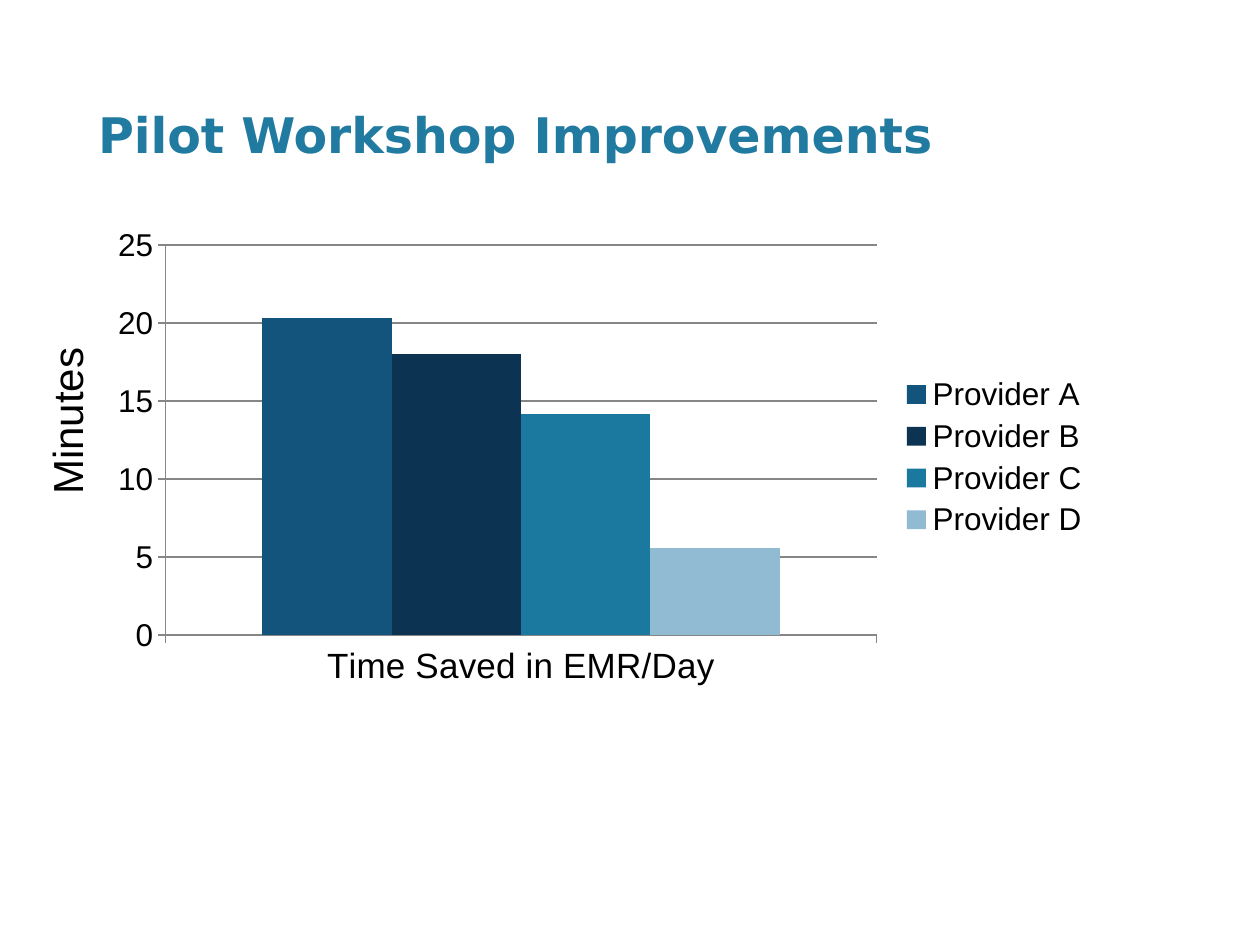
from dataclasses import dataclass

from pptx import Presentation
from pptx.chart.data import CategoryChartData
from pptx.dml.color import RGBColor
from pptx.enum.chart import XL_CHART_TYPE as ChartType
from pptx.enum.chart import XL_LEGEND_POSITION as LegendPosition
from pptx.enum.chart import XL_TICK_MARK as TickMark
from pptx.enum.text import MSO_ANCHOR as Anchor
from pptx.enum.text import MSO_AUTO_SIZE as AutoSize
from pptx.enum.text import PP_ALIGN as Align
from pptx.util import Pt

BLACK = RGBColor(0x00, 0x00, 0x00)
GREY = RGBColor(0x86, 0x86, 0x86)
TITLE_BLUE = RGBColor(0x21, 0x7A, 0xA0)

TITLE_FONT = {"name": "DejaVu Sans", "size": Pt(28), "bold": True}
CHART_FONT = {"name": "Arial", "size": Pt(18), "bold": False}
CATEGORY_FONT = {**CHART_FONT, "size": Pt(20)}
AXIS_TITLE_FONT = {**CHART_FONT, "size": Pt(24)}


@dataclass(frozen=True)
class Area:
    left: float
    top: float
    width: float
    height: float

    def lengths(self) -> tuple:
        return Pt(self.left), Pt(self.top), Pt(self.width), Pt(self.height)


@dataclass(frozen=True)
class Provider:
    name: str
    minutes: float
    color: RGBColor


TITLE_AREA = Area(56, 45, 574, 63.5)
CHART_AREA = Area(56, 124.5, 574, 273.5)
AXIS_TITLE_AREA = Area(20, 157.5, 44, 166.5)

PROVIDERS = [
    Provider("Provider A", 20.3, RGBColor(0x13, 0x54, 0x7D)),
    Provider("Provider B", 18, RGBColor(0x0C, 0x33, 0x51)),
    Provider("Provider C", 14.2, RGBColor(0x1B, 0x79, 0x9F)),
    Provider("Provider D", 5.6, RGBColor(0x91, 0xBA, 0xD3)),
]


def format_font(font, values: dict, color: RGBColor) -> None:
    for name, value in values.items():
        setattr(font, name, value)
    font.color.rgb = color


def format_line(line) -> None:
    line.color.rgb = GREY
    line.width = Pt(0.75)


def add_title(page, text: str) -> None:
    title = page.shapes.title
    title.left, title.top, title.width, title.height = TITLE_AREA.lengths()
    frame = title.text_frame
    frame.text = text
    frame.auto_size = AutoSize.NONE
    frame.vertical_anchor = Anchor.MIDDLE
    frame.margin_left = 0
    para = frame.paragraphs[0]
    para.alignment = Align.LEFT
    format_font(para.runs[0].font, TITLE_FONT, TITLE_BLUE)


def add_provider_chart(page, category: str) -> None:
    data = CategoryChartData()
    data.categories = [category]
    for provider in PROVIDERS:
        data.add_series(provider.name, [provider.minutes])
    chart = page.shapes.add_chart(
        ChartType.COLUMN_CLUSTERED, *CHART_AREA.lengths(), data
    ).chart
    chart.has_title = False
    format_font(chart.font, CHART_FONT, BLACK)

    # Columns
    plot = chart.plots[0]
    plot.gap_width = 150
    plot.overlap = 0
    plot.vary_by_categories = False
    for series, provider in zip(plot.series, PROVIDERS):
        series.format.fill.solid()
        series.format.fill.fore_color.rgb = provider.color

    # Axes and gridlines
    for axis in (chart.category_axis, chart.value_axis):
        axis.major_tick_mark = TickMark.OUTSIDE
        axis.minor_tick_mark = TickMark.NONE
        format_line(axis.format.line)
    format_font(chart.category_axis.tick_labels.font, CATEGORY_FONT, BLACK)
    scale = chart.value_axis
    scale.minimum_scale, scale.maximum_scale, scale.major_unit = 0, 25, 5
    scale.has_major_gridlines = True
    format_line(scale.major_gridlines.format.line)

    # Legend
    chart.has_legend = True
    chart.legend.position = LegendPosition.RIGHT
    chart.legend.include_in_layout = False


def add_axis_title(page, text: str) -> None:
    box = page.shapes.add_textbox(*AXIS_TITLE_AREA.lengths())
    frame = box.text_frame
    frame.word_wrap = True
    frame.auto_size = AutoSize.SHAPE_TO_FIT_TEXT
    frame.text = text
    # Text reads from bottom to top
    frame._txBody.bodyPr.set("vert", "vert270")
    para = frame.paragraphs[0]
    para.alignment = Align.CENTER
    format_font(para.runs[0].font, AXIS_TITLE_FONT, BLACK)


def main() -> None:
    deck = Presentation()
    deck.slide_width, deck.slide_height = Pt(720), Pt(540)
    page = deck.slides.add_slide(deck.slide_layouts.get_by_name("Title Only"))
    add_title(page, "Pilot Workshop Improvements")
    add_provider_chart(page, "Time Saved in EMR/Day")
    add_axis_title(page, "Minutes")
    deck.save("out.pptx")


if __name__ == "__main__":
    main()
